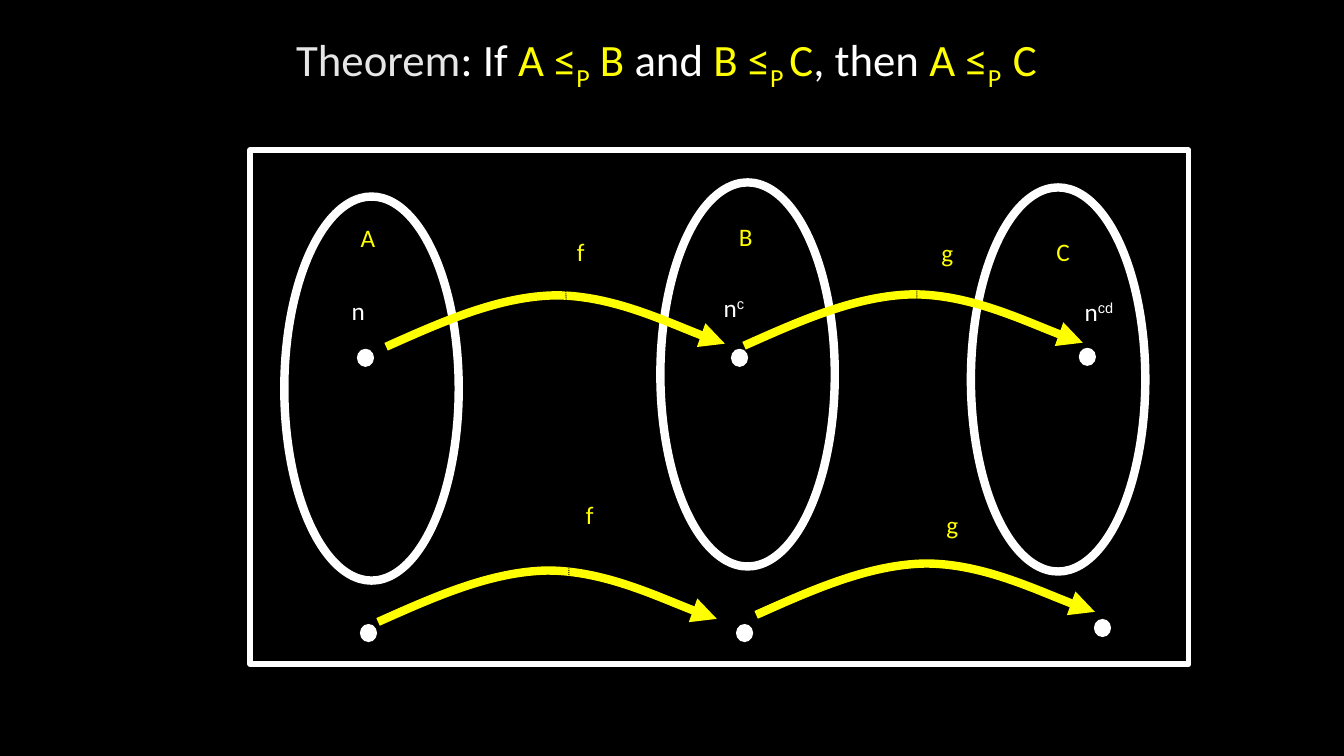
from pptx import Presentation
from pptx.util import Inches, Pt
from pptx.dml.color import RGBColor
from pptx.enum.dml import MSO_LINE
from pptx.enum.shapes import MSO_SHAPE as Shape, MSO_CONNECTOR as Link
from pptx.enum.text import PP_ALIGN as Align, MSO_ANCHOR as Anchor
from pptx.oxml.ns import qn
from lxml import etree

BLACK = RGBColor(0x00, 0x00, 0x00)
WHITE = RGBColor(0xFF, 0xFF, 0xFF)
GREY = RGBColor(0xE7, 0xE6, 0xE6)
YELLOW = RGBColor(0xFF, 0xFF, 0x00)

# text, colour, baseline shift in percent
TITLE = [
    ("Theorem", GREY, 0), (": If ", WHITE, 0),
    ("A ≤", YELLOW, 0), ("P", YELLOW, -25), (" B ", YELLOW, 0),
    ("and ", WHITE, 0),
    ("B ≤", YELLOW, 0), ("P ", YELLOW, -25), ("C", YELLOW, 0),
    (", then ", WHITE, 0),
    ("A ≤", YELLOW, 0), ("P  ", YELLOW, -25), ("C", YELLOW, 0),
]
FRAME = (2.48, 1.49, 9.31, 5.1)
SETS = [(2.82, 1.95), (6.55, 1.81), (9.63, 1.86)]
SET_SIZE = (1.73, 3.81)
DOTS = [(3.54, 3.46), (7.25, 3.46), (10.7, 3.45),
        (3.57, 6.19), (7.3, 6.19), (10.85, 6.14)]
DOT_SIZE = (0.17, 0.18)
# name, left, top, width
NAMES = [("A", 3.43, 2.16, 0.44), ("B", 7.2, 2.15, 0.39), ("C", 10.33, 2.29, 0.43),
         ("f", 5.61, 2.29, 0.3), ("f", 5.7, 4.9, 0.3),
         ("g", 9.21, 2.31, 0.37), ("g", 9.26, 5, 0.37)]
# exponent of n, left, top
POWERS = [("", 3.39, 2.88), ("c", 7.08, 2.85), ("cd", 10.66, 2.89)]
# start points of the arrows, and the dotted line across each pair
F_ARROWS = [(3.83, 3.44), (3.75, 6.17)]
G_ARROWS = [(7.38, 3.43), (7.5, 6.1)]
F_MARK = (5.6, 1.62, 5.65, 6.45)
G_MARK = (9.08, 1.56, 9.13, 6.4)
# two Bezier pieces, three points each, measured from the start
CURVE = [(0.56, -0.25), (1.12, -0.5), (1.68, -0.51),
         (2.24, -0.51), (3.09, -0.11), (3.36, -0.03)]

deck = Presentation()
deck.slide_width, deck.slide_height = Inches(13.33), Inches(7.5)
slide = deck.slides.add_slide(deck.slide_layouts[5])
slide.background.fill.solid()
slide.background.fill.fore_color.rgb = BLACK
shapes = slide.shapes


def add_run(para, text, size, color, shift=0, font="Calibri"):
    run = para.add_run()
    run.text = text
    run.font.size, run.font.name = Pt(size), font
    run.font.color.rgb = color
    if shift:
        run.font._element.set("baseline", str(shift * 1000))


def add_label(left, top, width, wrap):
    box = shapes.add_textbox(*map(Inches, (left, top, width, 0.48)))
    box.text_frame.word_wrap = wrap
    return box.text_frame.paragraphs[0]


def set_line(shape, color, width):
    shape.line.color.rgb = color
    shape.line.width = Pt(width)


def add_outline(kind, box, width):
    shape = shapes.add_shape(kind, *map(Inches, box))
    shape.shadow.inherit = False
    shape.fill.background()
    set_line(shape, WHITE, width)


def add_dot(left, top):
    dot = shapes.add_shape(Shape.OVAL, *map(Inches, (left, top, *DOT_SIZE)))
    dot.shadow.inherit = False
    dot.fill.solid()
    dot.fill.fore_color.rgb = WHITE
    dot.line.fill.background()


def add_arrow(x, y):
    """Draw CURVE from x, y, turning each three straight steps into one Bezier."""
    form = shapes.build_freeform(Inches(x), Inches(y))
    form.add_line_segments([(Inches(x + dx), Inches(y + dy)) for dx, dy in CURVE],
                           close=False)
    arrow = form.convert_to_shape()
    arrow.shadow.inherit = False
    arrow.fill.background()
    set_line(arrow, YELLOW, 6)
    steps = list(arrow._element.iter(qn("a:lnTo")))
    for i in range(0, len(steps), 3):
        bend = etree.Element(qn("a:cubicBezTo"))
        steps[i].addprevious(bend)
        for step in steps[i:i + 3]:
            bend.append(step[0])
            step.getparent().remove(step)
    line = arrow.line._get_or_add_ln()
    etree.SubElement(line, qn("a:tailEnd"), type="triangle")


def add_mark(ends):
    mark = shapes.add_connector(Link.STRAIGHT, *map(Inches, ends))
    set_line(mark, BLACK, 0.75)
    mark.line.dash_style = MSO_LINE.ROUND_DOT
    etree.SubElement(mark._element.spPr, qn("a:effectLst"))


title = shapes.title
title.left, title.top, title.width, title.height = map(Inches, (0.26, 0.26, 12.7, 0.61))
title.text_frame.vertical_anchor = Anchor.TOP
head = title.text_frame.paragraphs[0]
head.alignment = Align.CENTER
for text, color, shift in TITLE:
    add_run(head, text, 32, color, shift)

add_outline(Shape.RECTANGLE, FRAME, 4)
for spot in SETS:
    add_outline(Shape.OVAL, spot + SET_SIZE, 6)
for spot in DOTS:
    add_dot(*spot)

for start in F_ARROWS:
    add_arrow(*start)
add_mark(F_MARK)
# the second dotted line crosses only the upper g arrow
add_arrow(*G_ARROWS[0])
add_mark(G_MARK)
add_arrow(*G_ARROWS[1])

for name, left, top, width in NAMES:
    para = add_label(left, top, width, False)
    para.alignment = Align.CENTER
    add_run(para, name, 18, YELLOW)
for power, left, top in POWERS:
    para = add_label(left, top, 0.87, True)
    add_run(para, "n", 18, WHITE)
    if power:
        add_run(para, power, 18, WHITE, 30, "Arial")

deck.save("out.pptx")
